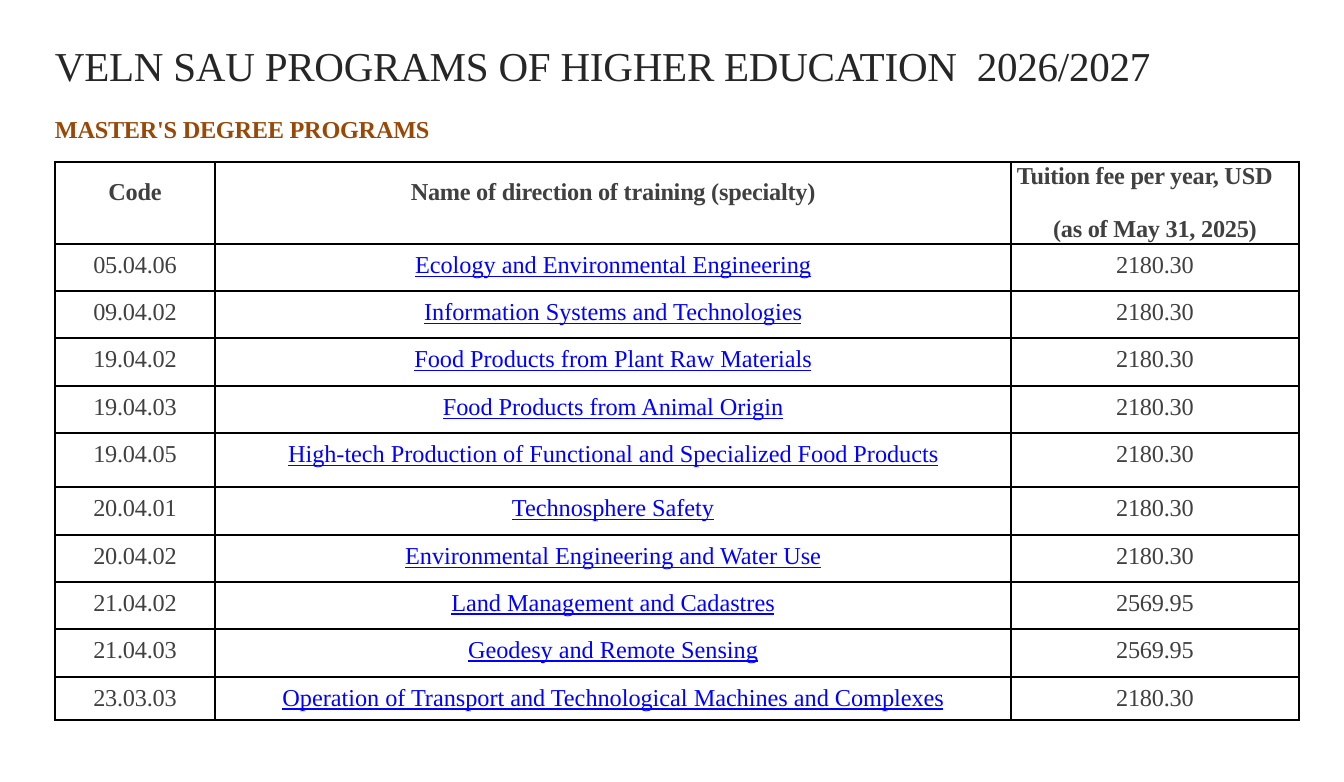
"""Build the slide listing master's degree programs and tuition fees."""
from dataclasses import dataclass

import pptx
import pptx.dml.color
import pptx.enum.text
import pptx.oxml
import pptx.oxml.ns
import pptx.util

PX = 914400 / 134.4
FONT = "Times New Roman"
COLORS = {
    "title": "262626",
    "heading": "984807",
    "text": "404040",
    "link": "0000FF",
    "border": "000000",
}
ALIGN = pptx.enum.text.PP_ALIGN
ANCHOR = pptx.enum.text.MSO_ANCHOR


@dataclass(frozen=True)
class Style:
    color: str
    size: int = 13
    bold: bool = False
    underline: bool = False
    spacing: int = -10
    before: float = 4.4
    align: ALIGN = ALIGN.CENTER


@dataclass(frozen=True)
class Program:
    code: str
    name: str
    height: int = 47
    fee: str = "2180.30"


TITLE = Style("title", size=22, before=1.1, align=ALIGN.LEFT)
SUBTITLE = Style("heading", bold=True, before=1, align=ALIGN.LEFT)
HEADER = Style("text", bold=True, before=9.4)
FEE_LABEL = Style("text", bold=True, before=0.5, align=ALIGN.LEFT)
FEE_DATE = Style("text", bold=True, before=14)
BODY = Style("text")
LINK = Style("link", underline=True, spacing=0)

COLUMNS = (160, 796, 288)
HEADER_HEIGHT = 82
PROGRAMS = (
    Program("05.04.06", "Ecology and Environmental Engineering"),
    Program("09.04.02", "Information Systems and Technologies"),
    Program("19.04.02", "Food Products from Plant Raw Materials", 48),
    Program("19.04.03", "Food Products from Animal Origin"),
    Program("19.04.05", "High-tech Production of Functional and Specialized Food Products", 54),
    Program("20.04.01", "Technosphere Safety", 48),
    Program("20.04.02", "Environmental Engineering and Water Use"),
    Program("21.04.02", "Land Management and Cadastres", fee="2569.95"),
    Program("21.04.03", "Geodesy and Remote Sensing", 48, "2569.95"),
    Program("23.03.03", "Operation of Transport and Technological Machines and Complexes", 43),
)


def px(n: int) -> pptx.util.Emu:
    return pptx.util.Emu(round(n * PX))


def format_paragraph(p, style: Style) -> None:
    p.alignment = style.align
    p.space_before = pptx.util.Pt(style.before)
    for r in p.runs:
        r.font.name = FONT
        r.font.size = pptx.util.Pt(style.size)
        r.font.bold = style.bold
        r.font.underline = style.underline
        r.font.color.rgb = pptx.dml.color.RGBColor.from_string(COLORS[style.color])
        r.font._element.set("spc", str(style.spacing))


def set_text(tf, text: str, *styles: Style) -> None:
    tf.text = text
    for p, style in zip(tf.paragraphs, styles):
        format_paragraph(p, style)


def place_text(sp, box: tuple[int, int, int, int], text: str, style: Style) -> None:
    sp.left, sp.top, sp.width, sp.height = map(px, box)
    tf = sp.text_frame
    tf.word_wrap = True
    tf.auto_size = pptx.enum.text.MSO_AUTO_SIZE.NONE
    tf.vertical_anchor = ANCHOR.TOP
    tf.margin_left = tf.margin_right = tf.margin_bottom = 0
    tf.margin_top = px(1)
    set_text(tf, text, style)


def add_borders(cell) -> None:
    tc_pr = cell._tc.get_or_add_tcPr()
    for side in "LRTB":
        tc_pr.append(pptx.oxml.parse_xml(
            f'<a:ln{side} {pptx.oxml.ns.nsdecls("a")} w="12700"><a:solidFill>'
            f'<a:srgbClr val="{COLORS["border"]}"/></a:solidFill></a:ln{side}>'))


def fill_cell(cell, text: str, *styles: Style, top: int = 8, side: int = 0) -> None:
    add_borders(cell)
    cell.fill.background()
    cell.vertical_anchor = ANCHOR.TOP
    cell.margin_left = cell.margin_right = px(side)
    cell.margin_top, cell.margin_bottom = px(top), 0
    set_text(cell.text_frame, text, *styles)


def add_program_table(s) -> None:
    heights = (HEADER_HEIGHT, *(program.height for program in PROGRAMS))
    table = s.shapes.add_table(
        len(heights), len(COLUMNS), px(55), px(162), px(sum(COLUMNS)), px(sum(heights))
    ).table
    table.first_row = table.horz_banding = False
    for column, width in zip(table.columns, COLUMNS):
        column.width = px(width)
    for row, height in zip(table.rows, heights):
        row.height = px(height)

    fill_cell(table.cell(0, 0), "Code", HEADER, top=17)
    fill_cell(table.cell(0, 1), "Name of direction of training (specialty)", HEADER, top=17)
    fill_cell(table.cell(0, 2), "Tuition fee per year, USD\n(as of May 31, 2025)",
              FEE_LABEL, FEE_DATE, top=1, side=6)
    for i, program in enumerate(PROGRAMS, 1):
        fill_cell(table.cell(i, 0), program.code, BODY)
        fill_cell(table.cell(i, 1), program.name, LINK)
        fill_cell(table.cell(i, 2), program.fee, BODY)


def main() -> None:
    prs = pptx.Presentation()
    prs.slide_width, prs.slide_height = px(1344), px(782)
    s = prs.slides.add_slide(prs.slide_layouts[5])
    place_text(s.shapes.title, (55, 39, 1189, 62),
               "VELN SAU PROGRAMS OF HIGHER EDUCATION  2026/2027", TITLE)
    add_program_table(s)
    place_text(s.shapes.add_textbox(0, 0, 0, 0), (55, 113, 487, 44),
               "MASTER'S DEGREE PROGRAMS", SUBTITLE)
    prs.save("out.pptx")


if __name__ == "__main__":
    main()
